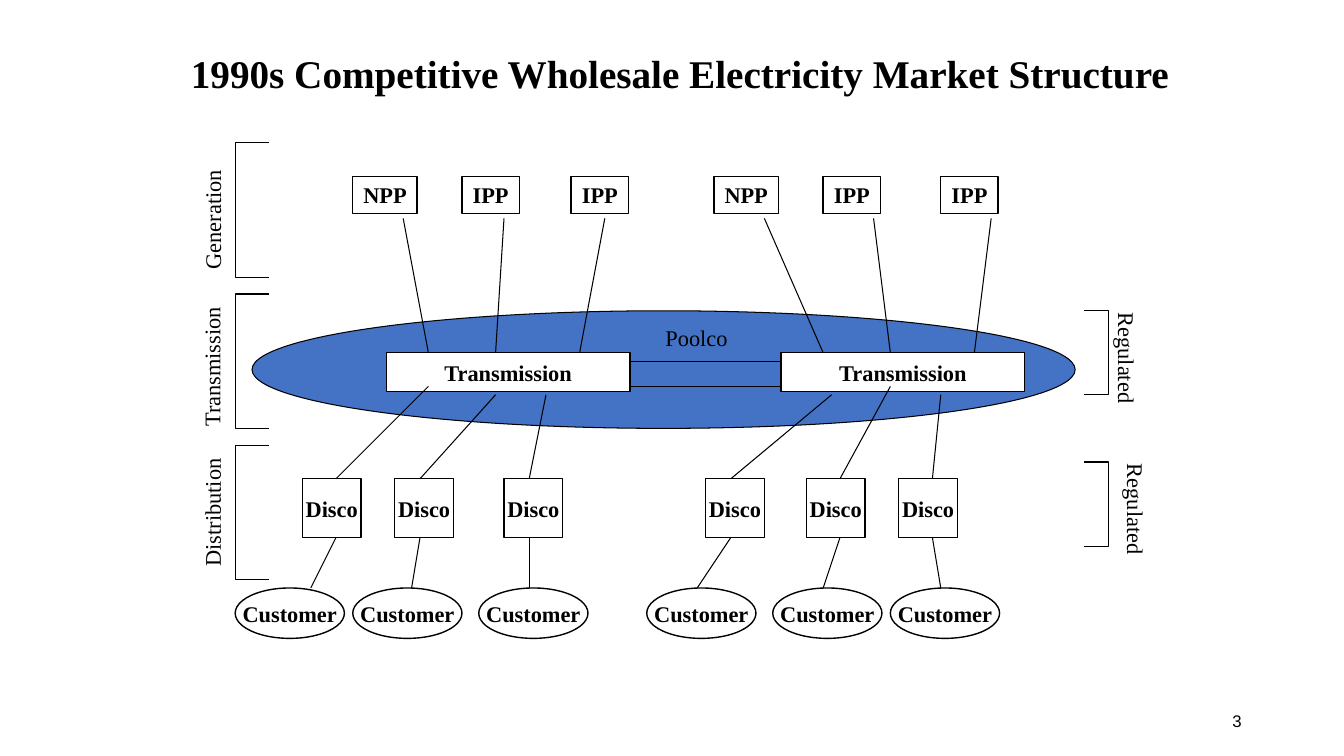
from lxml import etree
from pptx import Presentation
from pptx.dml.color import RGBColor
from pptx.enum import shapes, text
from pptx.oxml.ns import qn
from pptx.util import Pt

COLORS = {"ink": "000000", "paper": "FFFFFF", "pool": "4472C4"}
SERIF = "Times New Roman"
RECTANGLE, OVAL = shapes.MSO_SHAPE.RECTANGLE, shapes.MSO_SHAPE.OVAL
LEFT, CENTER, RIGHT = text.PP_ALIGN.LEFT, text.PP_ALIGN.CENTER, text.PP_ALIGN.RIGHT

GENERATORS = [("NPP", 252, 46), ("IPP", 330, 41), ("IPP", 408, 41),
              ("NPP", 510, 46), ("IPP", 588, 41), ("IPP", 672, 41)]
# x at the generator, x at the transmission box
SUPPLY_LINES = [(288, 306), (360, 354), (432, 414), (546, 588), (624, 636), (708, 696)]
DISCO_LEFTS = [216, 282, 360, 504, 576, 642]
CUSTOMER_LEFTS = [168, 252, 342, 462, 552, 636]
# x at the disco, x and y at the transmission box, x at the customer
DELIVERY_LINES = [(240, 306, 276, 222), (300, 354, 282, 294), (378, 390, 282, 378),
                  (522, 594, 282, 498), (600, 636, 276, 588), (666, 672, 282, 672)]


def color(name):
    return RGBColor.from_string(COLORS[name])


def write(shape, words, size=16, bold=False, align=CENTER, font=SERIF, wrap=False):
    frame = shape.text_frame
    frame.word_wrap = wrap
    frame.vertical_anchor = text.MSO_ANCHOR.MIDDLE
    paragraph = frame.paragraphs[0]
    paragraph.alignment = align
    run = paragraph.add_run()
    run.text = words
    run.font.size = Pt(size)
    run.font.bold = bold
    run.font.name = font
    run.font.color.rgb = color("ink")


def add_label(slide, words, left, top, width, height=26.6, rotation=0, **style):
    box = slide.shapes.add_textbox(Pt(left), Pt(top), Pt(width), Pt(height))
    box.rotation = rotation
    write(box, words, **style)


def outline(shape, weight):
    shape.shadow.inherit = False
    shape.line.color.rgb = color("ink")
    shape.line.width = Pt(weight)


def add_node(slide, kind, left, top, width, height, words="", fill="paper", weight=1):
    node = slide.shapes.add_shape(kind, Pt(left), Pt(top), Pt(width), Pt(height))
    node.fill.solid()
    node.fill.fore_color.rgb = color(fill)
    outline(node, weight)
    if words:
        write(node, words, bold=True)


def add_line(slide, x1, y1, x2, y2):
    line = slide.shapes.add_connector(
        shapes.MSO_CONNECTOR.STRAIGHT, Pt(x1), Pt(y1), Pt(x2), Pt(y2))
    line.line.color.rgb = color("ink")
    line.line.width = Pt(0.75)
    etree.SubElement(line._element.spPr, qn("a:effectLst"))


def add_bracket(slide, tip, spine, top, height):
    """Open bracket whose two arms reach from the spine to the tip."""
    bottom = top + height
    builder = slide.shapes.build_freeform(Pt(tip), Pt(bottom))
    corners = [(spine, bottom), (spine, top), (tip, top)]
    builder.add_line_segments([(Pt(x), Pt(y)) for x, y in corners], close=False)
    bracket = builder.convert_to_shape()
    bracket.fill.background()
    outline(bracket, 0.75)


def add_network(slide):
    for words, left, width in GENERATORS:
        add_node(slide, RECTANGLE, left, 126, width, 26.6, words)
    add_node(slide, OVAL, 180, 222, 588, 84, fill="pool", weight=0.75)
    for left in (276, 558):
        add_node(slide, RECTANGLE, left, 252, 174, 27.6, "Transmission")
    for y in (258, 276):
        add_line(slide, 450, y, 558, y)
    for left in CUSTOMER_LEFTS:
        add_node(slide, OVAL, left, 420, 78, 36, "Customer")
    for left in DISCO_LEFTS:
        add_node(slide, RECTANGLE, left, 342, 42, 42, "Disco")
    for generator_x, grid_x in SUPPLY_LINES:
        add_line(slide, generator_x, 156, grid_x, 252)
    for disco_x, grid_x, grid_y, customer_x in DELIVERY_LINES:
        add_line(slide, disco_x, 342, grid_x, grid_y)
        add_line(slide, customer_x, 420, disco_x, 384)


def add_sectors(slide):
    for top in (102, 210, 318):
        add_bracket(slide, 192, 168, top, 96)
    for top in (222, 330):
        add_bracket(slide, 774, 792, top, 60)
    add_label(slide, "Generation", 108.7, 143.3, 85.7, rotation=270, align=LEFT)
    add_label(slide, "Transmission", 85, 232.6, 132, rotation=270, align=LEFT, wrap=True)
    add_label(slide, "Distribution", 73.4, 352.8, 156, rotation=270, wrap=True)
    for left, top in ((765.4, 242.6), (771.8, 350.6)):
        add_label(slide, "Regulated", left, top, 79.2, rotation=90, align=LEFT)


def main():
    presentation = Presentation()
    presentation.slide_width, presentation.slide_height = Pt(960), Pt(540)
    slide = presentation.slides.add_slide(presentation.slide_layouts[6])
    add_network(slide)
    add_sectors(slide)
    add_label(slide, "1990s Competitive Wholesale Electricity Market Structure",
              125.3, 31.7, 720.7, 41, size=28, bold=True)
    add_label(slide, "Poolco", 468, 228, 59)
    add_label(slide, "3", 678, 500.4, 216, 28.8, size=12, font="Arial",
              align=RIGHT, wrap=True)
    presentation.save("out.pptx")


if __name__ == "__main__":
    main()
